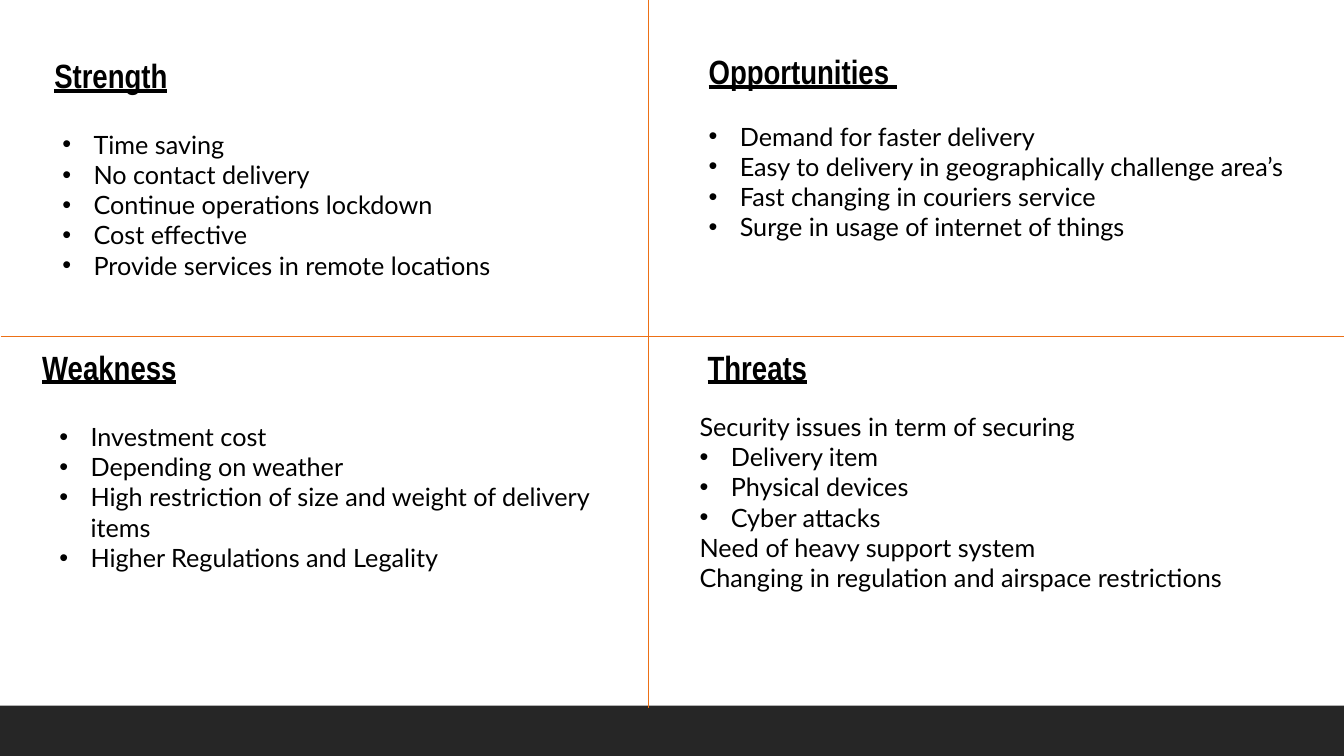
from pptx import Presentation
from pptx.dml.color import RGBColor
from pptx.enum.shapes import MSO_CONNECTOR, MSO_SHAPE
from pptx.enum.text import MSO_AUTO_SIZE
from pptx.oxml.ns import qn
from pptx.util import Inches, Pt
from lxml import etree

RECT = MSO_SHAPE.RECTANGLE
STRAIGHT = MSO_CONNECTOR.STRAIGHT
GROW = MSO_AUTO_SIZE.SHAPE_TO_FIT_TEXT
BLACK = RGBColor(0x00, 0x00, 0x00)
DARK = RGBColor(0x26, 0x26, 0x26)
ORANGE = RGBColor(0xEC, 0x70, 0x16)

prs = Presentation()
prs.slide_width = Inches(13.33)
prs.slide_height = Inches(7.5)
slide = prs.slides.add_slide(prs.slide_layouts[6])
shapes = slide.shapes


def add_box(left, top, width, height):
    frame = shapes.add_textbox(Inches(left), Inches(top), Inches(width), Inches(height)).text_frame
    frame.word_wrap = True
    frame.auto_size = GROW
    return frame


def add_run(para, text, face, size, strong=False):
    run = para.add_run()
    run.text = text
    font = run.font
    font.name = face
    font.size = Pt(size)
    font.bold = strong
    font.underline = strong
    font.color.rgb = BLACK


# Footer bar
bar = shapes.add_shape(RECT, Inches(0), Inches(7), Inches(13.33), Inches(0.5))
bar.shadow.inherit = False
bar.fill.solid()
bar.fill.fore_color.rgb = DARK
bar.line.fill.background()

# Quadrants: heading, heading box, body box, lines as (bulleted, text)
parts = [
    ("Strength", (0.44, 0.5, 6.31, 0.5), (0.52, 1.23, 5.93, 1.62), [
        (True, "Time saving"),
        (True, "No contact delivery"),
        (True, "Continue operations lockdown"),
        (True, "Cost effective"),
        (True, "Provide services in remote locations"),
    ]),
    ("Weakness", (0.32, 3.39, 5.68, 0.5), (0.49, 4.13, 5.93, 1.31), [
        (True, "Investment cost"),
        (True, "Depending on weather"),
        (True, "High restriction of size and weight of delivery items"),
        (True, "Higher Regulations and Legality"),
    ]),
    ("Opportunities ", (6.93, 0.46, 3.93, 0.5), (6.93, 1.15, 5.93, 1.31), [
        (True, "Demand for faster delivery"),
        (True, "Easy to delivery in geographically challenge area’s"),
        (True, "Fast changing in couriers service"),
        (True, "Surge in usage of internet of things"),
    ]),
    ("Threats", (6.92, 3.39, 5.17, 0.5), (6.84, 4.03, 5.8, 2.83), [
        (False, "Security issues in term of securing"),
        (True, "Delivery item"),
        (True, "Physical devices"),
        (True, "Cyber attacks"),
        (False, "Need of heavy support system"),
        (False, "Changing in regulation and airspace restrictions"),
    ]),
]
for name, head, body, lines in parts:
    add_run(add_box(*head).paragraphs[0], name, "Arial Narrow", 24, True)
    frame = add_box(*body)
    for i, (dot, text) in enumerate(lines):
        para = frame.add_paragraph() if i else frame.paragraphs[0]
        if dot:
            props = para._p.get_or_add_pPr()
            props.set("marL", str(Inches(0.31)))
            props.set("indent", str(-Inches(0.31)))
            etree.SubElement(props, qn("a:buFont")).set("typeface", "Arial")
            etree.SubElement(props, qn("a:buChar")).set("char", "•")
        add_run(para, text, "Lato", 18)

# Dividing lines
for x1, y1, x2, y2 in [(6.43, 0, 6.43, 7.02), (0.01, 3.34, 13.34, 3.34)]:
    rule = shapes.add_connector(STRAIGHT, Inches(x1), Inches(y1), Inches(x2), Inches(y2))
    rule.line.color.rgb = ORANGE
    rule.line.width = Pt(1)
    etree.SubElement(rule._element.spPr, qn("a:effectLst"))

prs.save("out.pptx")
